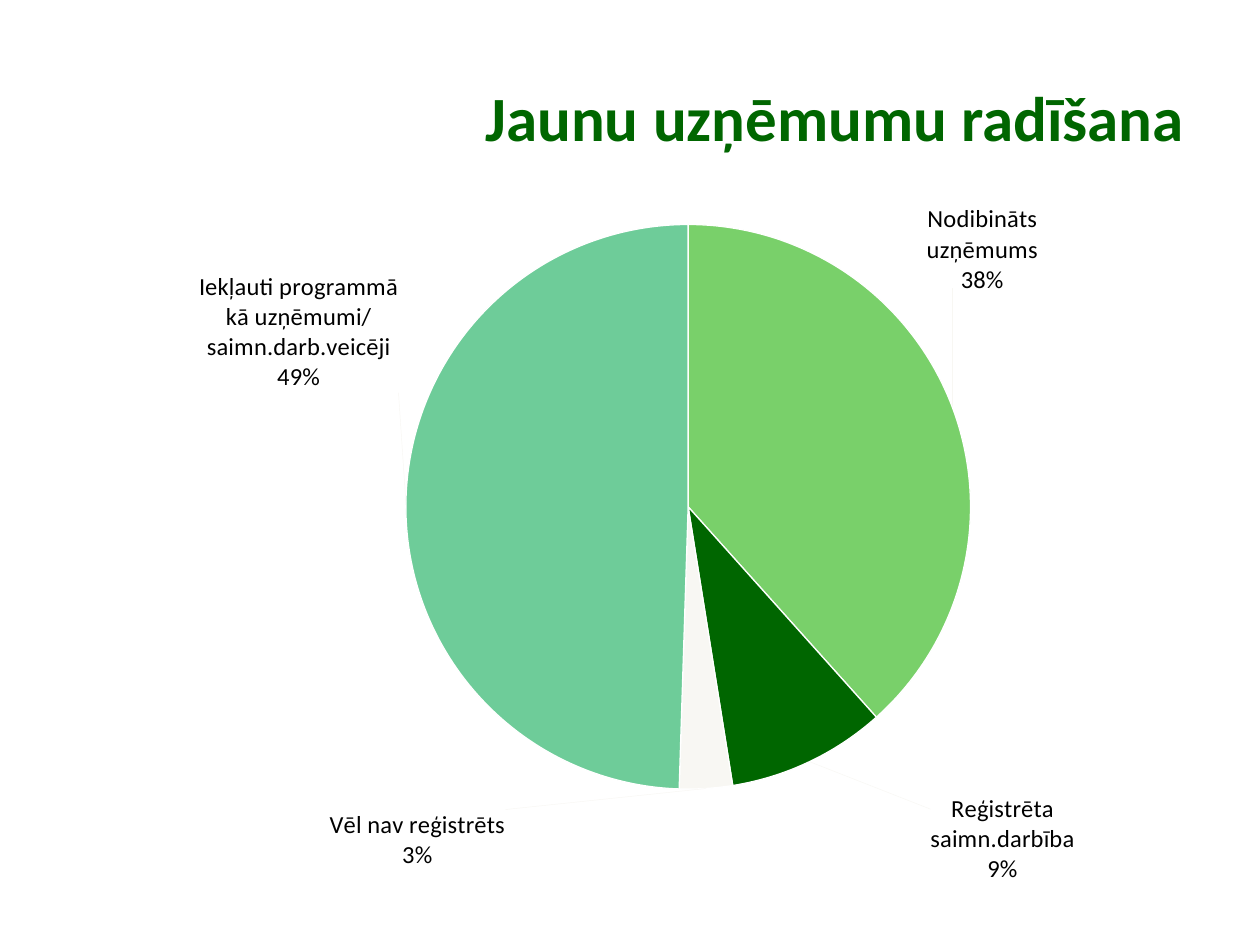
import dataclasses

import lxml.etree
import pptx
import pptx.chart.data
import pptx.dml.color
import pptx.enum.chart
import pptx.enum.text
import pptx.oxml
import pptx.oxml.ns
import pptx.util


@dataclasses.dataclass(frozen=True)
class Theme:
    """Colours, font and type sizes of the slide."""
    font: str = "Calibri"
    title_size: int = 36
    label_size: int = 14
    title: str = "006600"
    text: str = "000000"
    line: str = "FFFFFF"
    leader: str = "F8F7F3"


THEME = Theme()
WIDTH, HEIGHT = pptx.util.Inches(10), pptx.util.Inches(7.5)
PIE_AREA = {"x": 0.28, "y": 0.03, "w": 0.53, "h": 0.83}
# category, value, colour, label shift as shares of the chart's size
SLICES = [
    ("Nodibināts uzņēmums", 38, "79D06A", (-0.03, -0.17)),
    ("Reģistrēta saimn.darbība", 9, "006600", (0.11, 0.06)),
    ("Vēl nav reģistrēts", 3, "F8F7F3", (-0.27, 0.02)),
    ("Iekļauti programmā kā uzņēmumi/ saimn.darb.veicēji", 49, "6ECC99", (0, -0.25)),
]


def color(value):
    """Turn a hex string into a colour."""
    return pptx.dml.color.RGBColor.from_string(value)


def place(shape, left, top, width, height):
    """Place a shape by shares of the slide's size."""
    shape.left, shape.width = int(left * WIDTH), int(width * WIDTH)
    shape.top, shape.height = int(top * HEIGHT), int(height * HEIGHT)


def style_font(font, size, value, bold=False):
    """Apply the theme font with a size and colour."""
    font.name, font.size, font.bold = THEME.font, pptx.util.Pt(size), bold
    font.color.rgb = color(value)


def chart_xml(body):
    """Parse a chart fragment."""
    return pptx.oxml.parse_xml(body.replace(
        ">", f" {pptx.oxml.ns.nsdecls('c', 'a')}>", 1))


def layout_xml(values, modes=""):
    """Build a manual layout from shares of the chart's size."""
    parts = "".join(f'<c:{name} val="{value}"/>' for name, value in values.items())
    return f"<c:layout><c:manualLayout>{modes}{parts}</c:manualLayout></c:layout>"


def add_title(slide, text):
    """Fill and format the title placeholder."""
    title = slide.shapes.title
    place(title, 0.05, 0.04, 0.9, 1 / 6)
    title.text_frame.text = text
    title.text_frame.vertical_anchor = pptx.enum.text.MSO_ANCHOR.MIDDLE
    paragraph = title.text_frame.paragraphs[0]
    paragraph.alignment = pptx.enum.text.PP_ALIGN.RIGHT
    style_font(paragraph.font, THEME.title_size, THEME.title, True)


def add_labels(plot):
    """Show category and percentage, shifted label by label."""
    plot.has_data_labels = True
    labels = plot.series[0].data_labels if hasattr(plot.series[0], "data_labels") else plot.data_labels
    style_font(labels.font, THEME.label_size, THEME.text)
    labels.show_value = False
    labels.show_category_name = labels.show_percentage = True
    labels.position = pptx.enum.chart.XL_LABEL_POSITION.BEST_FIT
    element = labels._element
    shows = "".join(f'<c:show{name} val="{value}"/>' for name, value in (
        ("LegendKey", 0), ("Val", 0), ("CatName", 1), ("SerName", 0),
        ("Percent", 1), ("BubbleSize", 0)))
    for index, (_, _, _, (x, y)) in enumerate(SLICES):
        element.insert(index, chart_xml(
            f'<c:dLbl><c:idx val="{index}"/>{layout_xml({"x": x, "y": y})}'
            f'<c:dLblPos val="bestFit"/>{shows}<c:separator>\n</c:separator></c:dLbl>'))
    leader = element.find(pptx.oxml.ns.qn("c:showLeaderLines"))
    if leader is not None:
        element.remove(leader)
    for body in (
            "<c:separator>\n</c:separator>",
            '<c:showLeaderLines val="1"/>',
            f'<c:leaderLines><c:spPr><a:ln w="3175"><a:solidFill><a:srgbClr val="{THEME.leader}"/>'
            "</a:solidFill></a:ln></c:spPr></c:leaderLines>"):
        if "showLeaderLines" in body:
            body = '<c:showLeaderLines val="1"></c:showLeaderLines>'
        element.append(chart_xml(body))


def add_pie(slide):
    """Add the pie chart of new companies."""
    data = pptx.chart.data.CategoryChartData()
    data.categories = [name for name, *_ in SLICES]
    data.add_series("Series 1", [value for _, value, *_ in SLICES])
    frame = slide.shapes.add_chart(
        pptx.enum.chart.XL_CHART_TYPE.PIE, 0, 0, WIDTH, HEIGHT, data)
    place(frame, 0.083, 0.216, 0.85, 0.72)
    chart = frame.chart
    chart.has_title = chart.has_legend = False
    style_font(chart.font, 10, THEME.text)
    plot = chart.plots[0]
    plot.vary_by_categories = True
    for index, (_, _, fill, _) in enumerate(SLICES):
        point = plot.series[0].points[index].format
        point.fill.solid()
        point.fill.fore_color.rgb = color(fill)
        point.line.color.rgb = color(THEME.line)
        point.line.width = pptx.util.Pt(0.75)
    add_labels(plot)
    area = chart._chartSpace.chart.plotArea
    for layout in area.findall(pptx.oxml.ns.qn("c:layout")):
        area.remove(layout)
    modes = '<c:layoutTarget val="inner"/><c:xMode val="edge"/><c:yMode val="edge"/>'
    area.insert(0, chart_xml(layout_xml(PIE_AREA, modes)))


def main():
    """Build and save the slide."""
    presentation = pptx.Presentation()
    presentation.slide_width, presentation.slide_height = WIDTH, HEIGHT
    slide = presentation.slides.add_slide(presentation.slide_layouts[5])
    add_title(slide, "Jaunu uzņēmumu radīšana")
    add_pie(slide)
    presentation.save("out.pptx")


if __name__ == "__main__":
    main()
